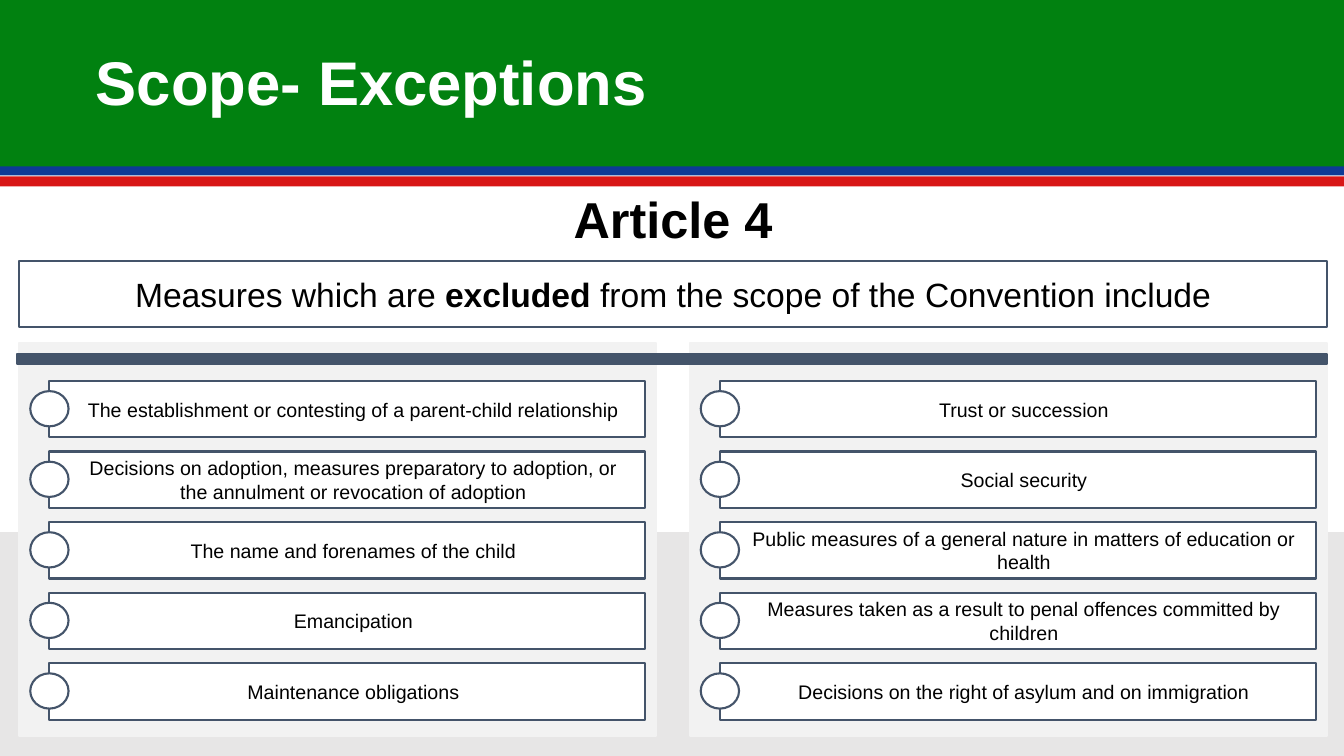
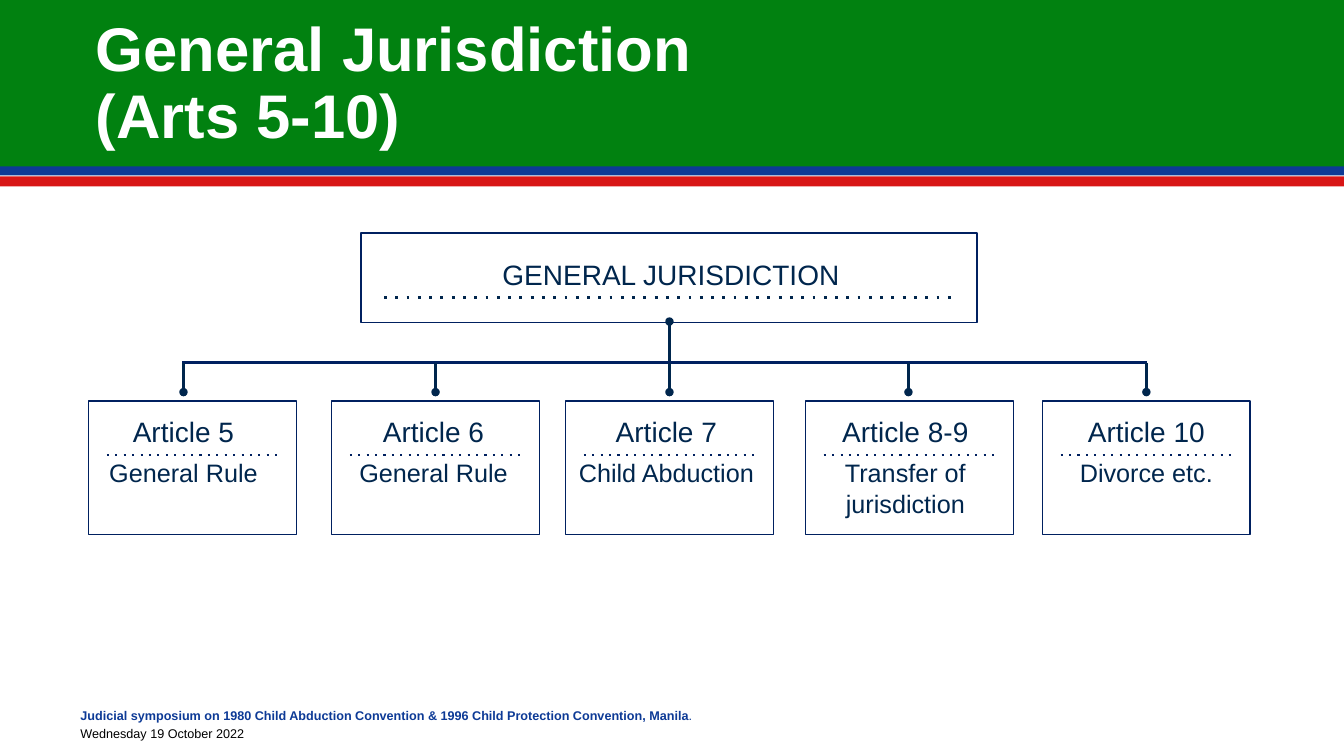
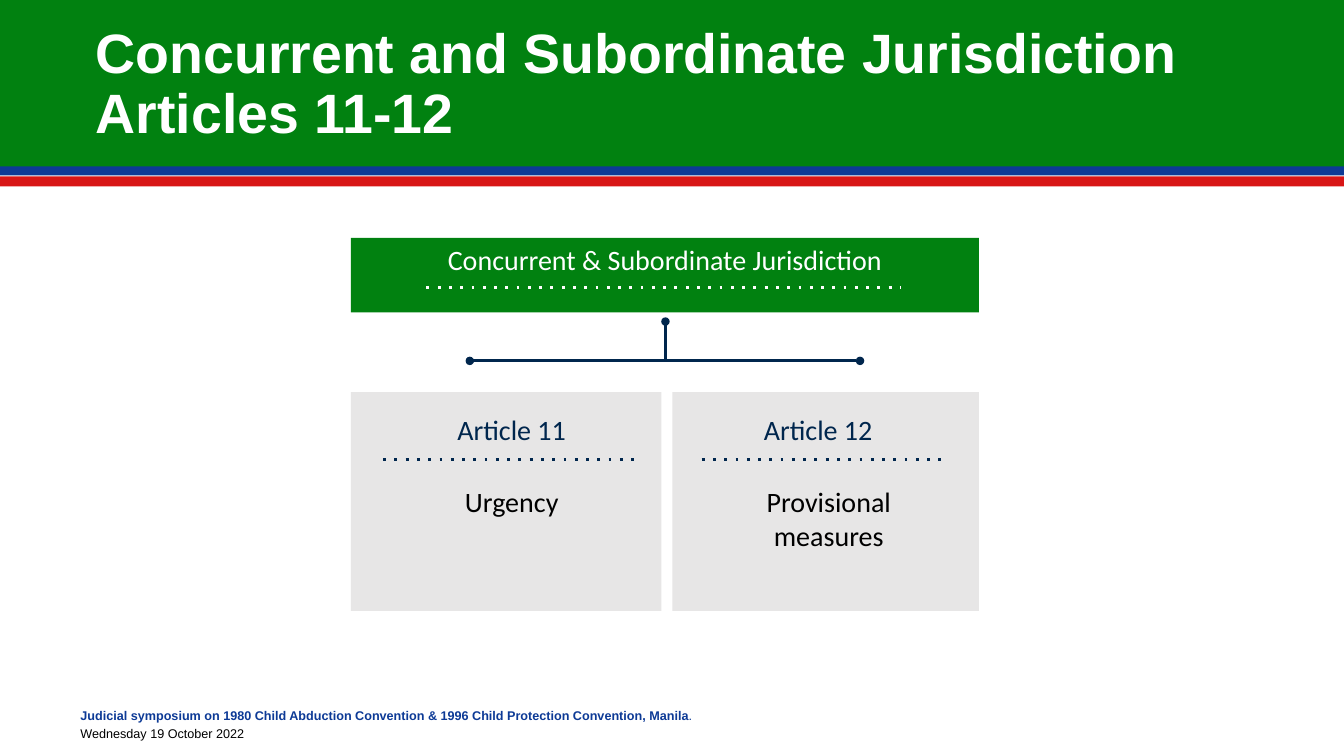
from dataclasses import dataclass

from lxml import etree
from pptx import Presentation
from pptx import util as u
from pptx.dml.color import RGBColor
from pptx.enum import shapes, text
from pptx.oxml.ns import qn

SCALE = 9144  # EMU per px, 100 px to the inch
WIDTH, HEIGHT = 1333, 750
CENTER, LEFT = text.PP_ALIGN.CENTER, text.PP_ALIGN.LEFT
TOP, MIDDLE = text.MSO_ANCHOR.TOP, text.MSO_ANCHOR.MIDDLE
RECT, OVAL = shapes.MSO_SHAPE.RECTANGLE, shapes.MSO_SHAPE.OVAL


@dataclass(frozen=True)
class Theme:
    # Colours
    green: str = "018110"
    blue: str = "0D3A96"
    red: str = "D81616"
    white: str = "FFFFFF"
    black: str = "000000"
    slate: str = "44546A"
    navy: str = "002060"
    ink: str = "00264D"
    grey: str = "E7E6E6"
    panel: str = "F2F2F2"
    # Fonts and type sizes
    font: str = "Arial"
    chart_font: str = "Calibri"
    title: float = 44
    long_title: float = 39.6
    heading: float = 36
    lead: float = 24
    label: float = 20
    body: float = 18
    item: float = 14
    footer: float = 9


T = Theme()


def px(value):
    return u.Emu(value * SCALE)


def color(value):
    return RGBColor.from_string(value)


# Text

def add_span(para, words, size, ink=T.black, bold=False, font=T.font):
    span = para.add_run()
    span.text = words
    span.font.size = u.Pt(size)
    span.font.name = font
    span.font.bold = bold
    span.font.color.rgb = color(ink)


def set_frame(box, anchor=TOP, insets=(10, 5, 10, 5)):
    frame = box.text_frame
    frame.word_wrap = True
    frame.auto_size = text.MSO_AUTO_SIZE.NONE
    frame.vertical_anchor = anchor
    (frame.margin_left, frame.margin_top,
     frame.margin_right, frame.margin_bottom) = map(px, insets)
    return frame


def write(box, paras, align=CENTER, anchor=TOP, insets=(10, 5, 10, 5),
          spacing=None, gap=0):
    """Fill a box; each paragraph is a list of (words, size, options)."""
    frame = set_frame(box, anchor, insets)
    for index, spans in enumerate(paras):
        para = frame.add_paragraph() if index else frame.paragraphs[0]
        para.alignment = align
        if spacing:
            para.line_spacing = spacing
        if index and gap:
            para.space_before = u.Pt(gap)
        for words, size, options in spans:
            add_span(para, words, size, **options)


def add_text(page, place, paras, **options):
    write(page.shapes.add_textbox(*map(px, place)), paras, **options)


# Shapes and lines

def add_box(page, place, fill=None, line=None, weight=1.5, kind=RECT):
    box = page.shapes.add_shape(kind, *map(px, place))
    box.shadow.inherit = False
    if fill:
        box.fill.solid()
        box.fill.fore_color.rgb = color(fill)
    else:
        box.fill.background()
    if line:
        box.line.color.rgb = color(line)
        box.line.width = u.Pt(weight)
    else:
        box.line.fill.background()
    return box


def add_line(page, start, end, ink=T.ink, weight=2, dotted=False, head=False, tail=False):
    line = page.shapes.add_connector(
        shapes.MSO_CONNECTOR.STRAIGHT, *map(px, (*start, *end)))
    line.line.color.rgb = color(ink)
    line.line.width = u.Pt(weight)
    stroke = line.line._get_or_add_ln()
    if dotted:
        etree.SubElement(stroke, qn("a:prstDash"), val="dot")
    for wanted, tag in ((head, "a:headEnd"), (tail, "a:tailEnd")):
        if wanted:
            etree.SubElement(stroke, qn(tag), type="oval")
    etree.SubElement(line.element.spPr, qn("a:effectLst"))


# Parts that the slides share

def add_page(deck, title_lines, size=T.title, footer=True):
    page = deck.slides.add_slide(deck.slide_layouts[5])
    for top, height, fill in ((162, 12, T.blue), (0, 165, T.green), (175, 10, T.red)):
        add_box(page, (0, top, WIDTH, height), fill)
    if footer:
        add_footer(page)

    title = page.shapes.title
    title.left, title.top, title.width, title.height = map(px, (85, 12, 1150, 145))
    para = set_frame(title, MIDDLE).paragraphs[0]
    para.alignment = LEFT
    para.line_spacing = 0.9
    for index, words in enumerate(title_lines):
        if index:
            para.add_line_break()
        add_span(para, words, size, T.white, True)
    page.shapes.element.append(title.element)  # in front of the bands
    return page


def add_footer(page):
    event = ("Judicial symposium on 1980 Child Abduction Convention"
             " & 1996 Child Protection Convention, Manila")
    add_text(page, (70, 694, 887, 45), [
        [(event, T.footer, {"ink": T.blue, "bold": True}),
         (".", T.footer, {"ink": T.blue})],
        [("Wednesday 19 October 2022", T.footer, {})],
    ], align=LEFT, spacing=1.2)


# Slide 1

def add_exceptions(page, left, items):
    for index, words in enumerate(items):
        top = 378 + 70 * index
        box = add_box(page, (left + 30, top, 591, 56), T.white, T.slate)
        write(box, [[(words, T.item, {})]], anchor=MIDDLE, insets=(28, 5, 16, 5))
        add_box(page, (left + 11, top + 10, 38, 35), T.white, T.slate, kind=OVAL)


def scope_page(deck):
    page = add_page(deck, ["Scope- Exceptions"], footer=False)
    backdrop = add_box(page, (0, 528, WIDTH, 222), T.grey)
    page.shapes.title.element.addprevious(backdrop.element)
    add_text(page, (322, 182, 691, 71),
             [[("Article 4", T.heading, {"bold": True})]])
    lead = add_box(page, (19, 259, 1297, 65), line=T.slate)
    write(lead, [[("Measures which are ", T.lead, {}),
                  ("excluded", T.lead, {"bold": True}),
                  (" from the scope of the Convention include", T.lead, {})]],
          anchor=MIDDLE)

    columns = {
        19: ["The establishment or contesting of a parent-child relationship",
             "Decisions on adoption, measures preparatory to adoption, "
             "or the annulment or revocation of adoption",
             "The name and forenames of the child",
             "Emancipation",
             "Maintenance obligations"],
        684: ["Trust or succession",
              "Social security",
              "Public measures of a general nature in matters of education or health",
              "Measures taken as a result to penal offences committed by children",
              "Decisions on the right of asylum and on immigration"],
    }
    for left in columns:
        add_box(page, (left, 340, 632, 390), T.panel, T.panel)
    add_box(page, (17, 351, 1299, 10), T.slate, T.slate)
    for left, items in columns.items():
        add_exceptions(page, left, items)


# Slide 2

def add_article(page, name, rule, box_left, text_left, drop):
    add_line(page, (drop, 360), (drop, 389), tail=True)
    add_box(page, (box_left, 398, 206, 132), T.white, T.navy, 1)
    add_text(page, (text_left, 406, 206, 114),
             [[(name, T.label, {"ink": T.ink})], [(rule, T.body, {"ink": T.ink})]],
             gap=7)
    add_line(page, (box_left + 18, 451), (box_left + 188, 451), T.navy, 1.5, dotted=True)


def general_page(deck):
    page = add_page(deck, ["General Jurisdiction ", "(Arts 5-10)"])
    add_box(page, (358, 231, 611, 89), T.white, T.navy, 1)
    add_text(page, (381, 251, 569, 44),
             [[("GENERAL JURISDICTION", T.label, {"ink": T.ink})]])
    add_line(page, (381, 295), (950, 295), dotted=True)
    add_line(page, (664, 360), (664, 319), tail=True)
    add_line(page, (181, 360), (1138, 360), T.navy)

    # Name, rule, box left, text left, branch position
    for article in (
            ("Article 5", "General Rule", 88, 79, 182),
            ("Article 6", "General Rule", 329, 327, 432),
            ("Article 7", "Child Abduction", 561, 558, 664),
            ("Article 8-9", "Transfer of jurisdiction", 799, 795, 901),
            ("Article 10", "Divorce etc.", 1034, 1034, 1137)):
        add_article(page, *article)


# Slide 3

def add_card(page, place, name, name_place, measure, measure_place, rule):
    add_box(page, place, T.grey)
    for words, spot, ink in ((name, name_place, T.ink), (measure, measure_place, T.black)):
        add_text(page, spot, [[(words, T.label, {"ink": ink, "font": T.chart_font})]])
    add_line(page, (rule[0], 456), (rule[1], 456), dotted=True)


def concurrent_page(deck):
    page = add_page(deck, ["Concurrent and Subordinate Jurisdiction ", "Articles 11-12"],
                    T.long_title)
    header = add_box(page, (348, 236, 623, 74), T.green)
    write(header, [[("Concurrent & Subordinate Jurisdiction", T.label,
                     {"ink": T.white, "font": T.chart_font})]])
    add_line(page, (423, 285), (894, 285), T.white, dotted=True)
    add_line(page, (660, 319), (660, 358), head=True)
    add_line(page, (466, 358), (853, 358), head=True, tail=True)

    add_card(page, (348, 389, 308, 217), "Article 11", (380, 404, 255, 58),
             "Urgency", (380, 476, 255, 58), (380, 635))
    add_card(page, (667, 389, 304, 217), "Article 12", (730, 404, 163, 58),
             "Provisional measures", (696, 476, 252, 102), (696, 939))


def main():
    deck = Presentation()
    deck.slide_width, deck.slide_height = px(WIDTH), px(HEIGHT)
    scope_page(deck)
    general_page(deck)
    concurrent_page(deck)
    deck.save("out.pptx")


if __name__ == "__main__":
    main()
